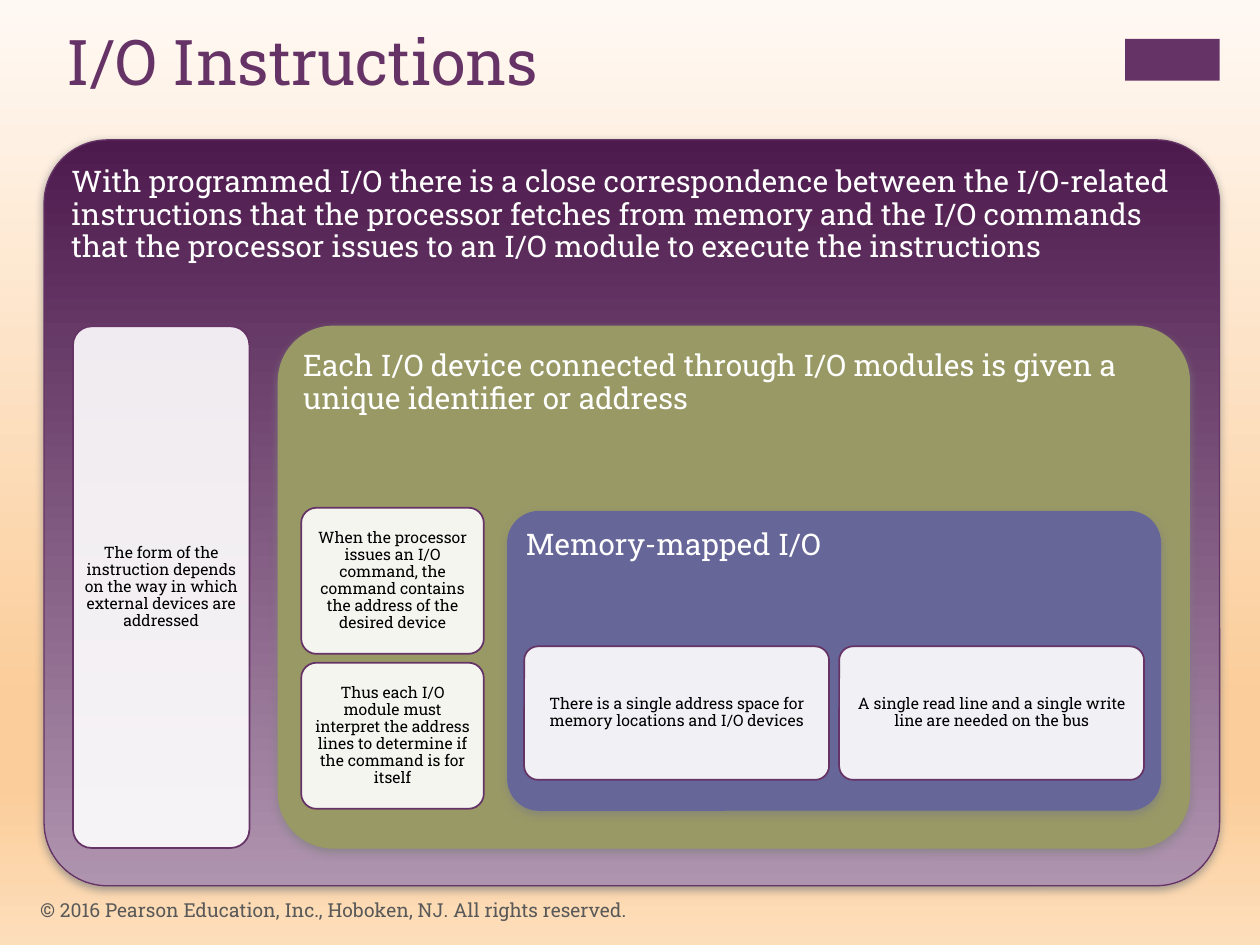
from dataclasses import dataclass

from lxml.etree import SubElement
from pptx import Presentation
from pptx.dml.color import RGBColor
from pptx.enum.shapes import MSO_SHAPE
from pptx.enum.text import MSO_ANCHOR, PP_ALIGN
from pptx.oxml.ns import qn
from pptx.util import Inches, Pt


@dataclass(frozen=True)
class Theme:
    font: str = "Roboto Slab"
    purple: str = "663366"
    olive: str = "999966"
    blue: str = "666699"
    white: str = "FFFFFF"
    black: str = "000000"
    gray: str = "595959"
    shadow: str = "808080"
    backdrop: tuple = ((0, "FFF9F4"), (74, "FBCD9A"), (83, "FBCD9A"), (100, "FDDEBB"))
    panel: tuple = ((0, "4D1A4D"), (100, "AF94AF"))
    title_size: int = 36
    heading_size: int = 17
    card_size: int = 9
    footer_size: int = 11


class SlideBuilder:
    """Draws themed elements on the current slide."""

    def __init__(self, prs, theme):
        self.theme = theme
        self.s = prs.slides.add_slide(prs.slide_layouts[5])

    def color(self, parent, value, alpha=None):
        clr = SubElement(parent, qn("a:srgbClr"), val=value)
        if alpha is not None:
            SubElement(clr, qn("a:alpha"), val=str(alpha * 1000))

    def gradient(self, fill, element, stops):
        fill.gradient()
        fill.gradient_angle = 270
        gs_list = element.find(".//" + qn("a:gsLst"))
        for gs in list(gs_list):
            gs_list.remove(gs)
        for position, value in stops:
            self.color(SubElement(gs_list, qn("a:gs"), pos=str(position * 1000)), value)

    def background(self):
        self.gradient(self.s.background.fill, self.s.element, self.theme.backdrop)

    def text(self, tf, text, size, color, align=PP_ALIGN.LEFT, anchor=MSO_ANCHOR.TOP,
             spacing=None, inset=None):
        tf.text = text
        tf.word_wrap = True
        tf.vertical_anchor = anchor
        if inset is not None:
            tf.margin_left = tf.margin_top = tf.margin_right = tf.margin_bottom = Inches(inset)
        p = tf.paragraphs[0]
        p.alignment = align
        p.line_spacing = spacing
        font = p.runs[0].font
        font.name = self.theme.font
        font.size = Pt(size)
        font.color.rgb = RGBColor.from_string(color)

    def title(self, text, box):
        sp = self.s.shapes.title
        sp.left, sp.top, sp.width, sp.height = map(Inches, box)
        self.text(sp.text_frame, text, self.theme.title_size, self.theme.purple)

    def footer(self, text, box):
        sp = self.s.shapes.add_textbox(*map(Inches, box))
        self.text(sp.text_frame, text, self.theme.footer_size, self.theme.gray,
                  anchor=MSO_ANCHOR.MIDDLE)

    def shape(self, kind, box, fill=None):
        sp = self.s.shapes.add_shape(kind, *map(Inches, box))
        sp.shadow.inherit = False
        if fill:
            sp.fill.solid()
            sp.fill.fore_color.rgb = RGBColor.from_string(fill)
        return sp

    def accent(self, box):
        self.shape(MSO_SHAPE.RECTANGLE, box, self.theme.purple).line.fill.background()

    def rounded(self, box, fill, line, width, radius):
        sp = self.shape(MSO_SHAPE.ROUNDED_RECTANGLE, box, fill)
        sp.adjustments[0] = radius
        sp.line.color.rgb = RGBColor.from_string(line)
        sp.line.width = Pt(width)
        return sp

    def panel(self, text, box, color, radius=0.105, stops=None):
        sp = self.rounded(box, color, color, 0.75, radius)
        if stops:
            self.gradient(sp.fill, sp.element, stops)
        effects = sp.element.spPr.find(qn("a:effectLst"))
        shadow = SubElement(effects, qn("a:outerShdw"), blurRad=str(Pt(5)), dist=str(Pt(2)),
                            dir="5400000", rotWithShape="0")
        self.color(shadow, self.theme.shadow, 75)
        self.text(sp.text_frame, text, self.theme.heading_size, self.theme.white,
                  spacing=0.9, inset=0.07)

    def card(self, text, box):
        sp = self.rounded(box, self.theme.white, self.theme.purple, 1, 0.105)
        clr = sp.element.spPr.find(qn("a:solidFill")).find(qn("a:srgbClr"))
        SubElement(clr, qn("a:alpha"), val="90000")
        self.text(sp.text_frame, text, self.theme.card_size, self.theme.black,
                  PP_ALIGN.CENTER, MSO_ANCHOR.MIDDLE, 0.9, 0.04)


def main():
    prs = Presentation()
    prs.slide_width, prs.slide_height = Inches(10), Inches(7.5)
    theme = Theme()
    b = SlideBuilder(prs, theme)
    b.background()
    b.accent((8.93, 0.31, 0.75, 0.33))
    b.title("I/O Instructions", (0.43, 0.13, 8.26, 1.22))

    b.panel("With programmed I/O there is a close correspondence between the I/O-related "
            "instructions that the processor fetches from memory and the I/O commands that "
            "the processor issues to an I/O module to execute the instructions",
            (0.35, 1.11, 9.33, 5.92), theme.purple, 0.085, theme.panel)
    b.card("The form of the instruction depends on the way in which external devices "
           "are addressed", (0.58, 2.59, 1.4, 4.14))

    b.panel("Each I/O device connected through I/O modules is given a unique identifier "
            "or address", (2.21, 2.59, 7.23, 4.14), theme.olive)
    address_cards = (
        "When the processor issues an I/O command, the command contains the address of "
        "the desired device",
        "Thus each I/O module must interpret the address lines to determine if the "
        "command is for itself",
    )
    for i, text in enumerate(address_cards):
        b.card(text, (2.39, 4.03 + 1.23 * i, 1.45, 1.16))

    b.panel("Memory-mapped I/O", (4.03, 4.06, 5.18, 2.37), theme.blue)
    memory_cards = (
        "There is a single address space for memory locations and I/O devices",
        "A single read line and a single write line are needed on the bus",
    )
    for i, text in enumerate(memory_cards):
        b.card(text, (4.16 + 2.5 * i, 5.13, 2.42, 1.06))

    b.footer("© 2016 Pearson Education, Inc., Hoboken, NJ. All rights reserved.",
             (0.22, 7.02, 6.7, 0.4))
    prs.save("out.pptx")


if __name__ == "__main__":
    main()
